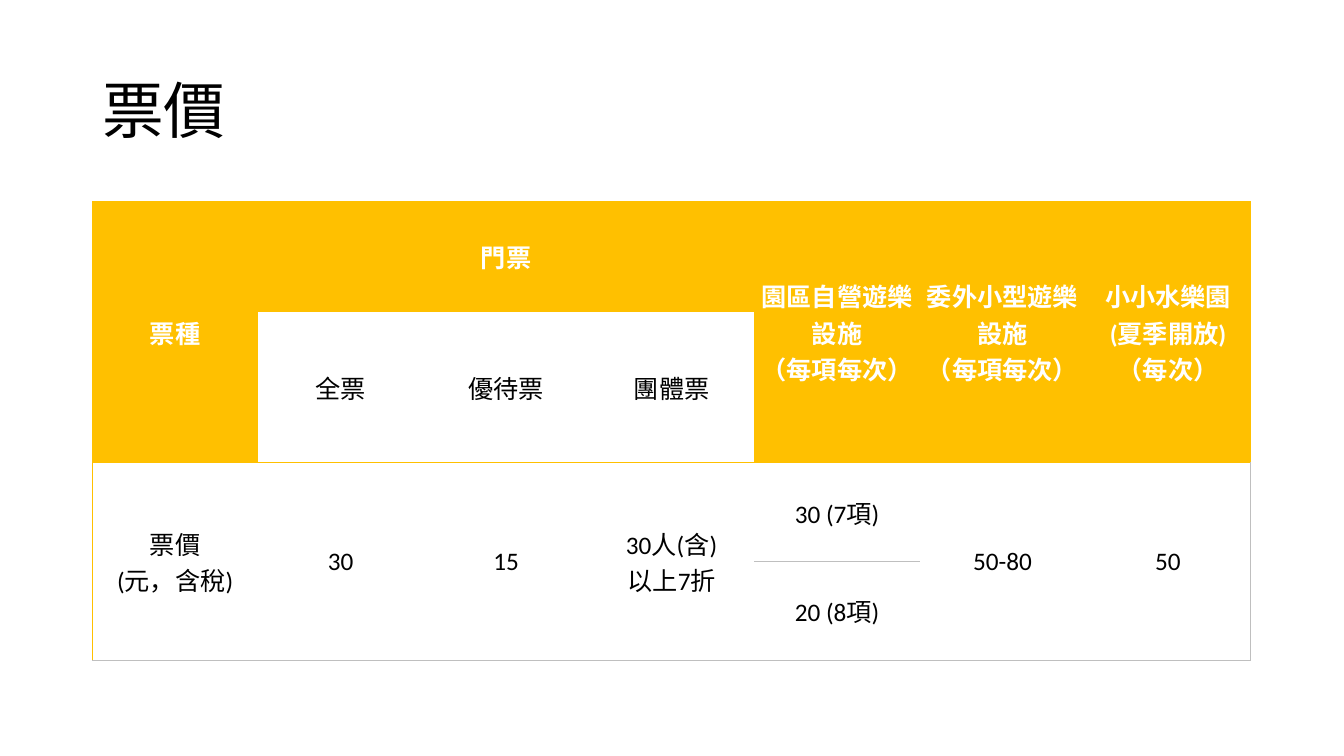
import pptx
import pptx.dml.color
import pptx.enum.text
import pptx.oxml.ns
import pptx.util
from lxml import etree
from pptx.util import Cm

COLORS = {"gold": "FFC000", "grey": "BFBFBF", "white": "FFFFFF", "black": "000000"}
FONT = "Calibri"
PLAIN_TABLE = "{2D5ABB26-0587-4C30-8999-92F81FD0307C}"
COLUMN_WIDTH = 4.17
ROW_HEIGHTS = [2.77, 3.81, 2.49, 2.49]
HEADER_ROWS = 2
SPLIT_COLUMN = 4

PRICES = [
    (0, 0, 2, 1, "票種"),
    (0, 1, 1, 3, "門票"),
    (0, 4, 2, 1, "園區自營遊樂設施\n（每項每次）"),
    (0, 5, 2, 1, "委外小型遊樂設施\n（每項每次）"),
    (0, 6, 2, 1, "小小水樂園\n(夏季開放)\n（每次）"),
    (1, 1, 1, 1, "全票"),
    (1, 2, 1, 1, "優待票"),
    (1, 3, 1, 1, "團體票"),
    (2, 0, 2, 1, "票價\n(元，含稅)"),
    (2, 1, 2, 1, "30"),
    (2, 2, 2, 1, "15"),
    (2, 3, 2, 1, "30人(含)\n以上7折"),
    (2, 4, 1, 1, "30 (7項)"),
    (3, 4, 1, 1, "20 (8項)"),
    (2, 5, 2, 1, "50-80"),
    (2, 6, 2, 1, "50"),
]


def rgb(name):
    """Return the named colour."""
    return pptx.dml.color.RGBColor.from_string(COLORS[name])


def write(frame, text, size=18, color="black", bold=False, align="CENTER", spacing=None):
    """Write one formatted paragraph into a text frame."""
    frame.word_wrap = True
    paragraph = frame.paragraphs[0]
    paragraph.text = text
    paragraph.alignment = getattr(pptx.enum.text.PP_ALIGN, align)
    paragraph.line_spacing = spacing
    for run in paragraph.runs:
        run.font.name = FONT
        run.font.size = pptx.util.Pt(size)
        run.font.bold = bold
        run.font.color.rgb = rgb(color)


def add_title(slide, text):
    """Add the slide heading."""
    heading = slide.shapes.add_textbox(Cm(2.33), Cm(1.01), Cm(29.21), Cm(3.68))
    heading.text_frame.vertical_anchor = pptx.enum.text.MSO_ANCHOR.MIDDLE
    write(heading.text_frame, text, size=44, align="LEFT", spacing=0.9)


def add_border(cell, side, color):
    """Draw a half-point line on one side of a cell."""
    properties = cell._tc.get_or_add_tcPr()
    line = etree.SubElement(properties, pptx.oxml.ns.qn(f"a:ln{side}"), w="6350")
    fill = etree.SubElement(line, pptx.oxml.ns.qn("a:solidFill"))
    etree.SubElement(fill, pptx.oxml.ns.qn("a:srgbClr"), val=COLORS[color])


def cell_borders(row, column, last_row, last_column):
    """Yield the visible sides and colours of a cell ending at last_row."""
    if column == 0:
        yield "L", "gold"
    if column == last_column:
        yield "R", "gold" if row < HEADER_ROWS else "grey"
    if row == 0:
        yield "T", "gold"
    if last_row == HEADER_ROWS - 1:
        yield "B", "gold"
    elif last_row == len(ROW_HEIGHTS) - 1 or (last_row >= HEADER_ROWS and column == SPLIT_COLUMN):
        yield "B", "grey"


def add_price_table(slide):
    """Add the ticket price table with its merged cells."""
    column_count = 7
    frame = slide.shapes.add_table(
        len(ROW_HEIGHTS), column_count, Cm(2.33), Cm(5.08),
        Cm(COLUMN_WIDTH * column_count), Cm(sum(ROW_HEIGHTS)))
    table = frame.table
    table._tbl.tblPr.find(pptx.oxml.ns.qn("a:tableStyleId")).text = PLAIN_TABLE
    table.horz_banding = False
    for column in table.columns:
        column.width = Cm(COLUMN_WIDTH)
    for row, height in zip(table.rows, ROW_HEIGHTS):
        row.height = Cm(height)
    for top, left, rows, columns, text in PRICES:
        origin = table.cell(top, left)
        if rows * columns > 1:
            origin.merge(table.cell(top + rows - 1, left + columns - 1))
        is_header = top == 0
        for row in range(top, top + rows):
            for column in range(left, left + columns):
                cell = table.cell(row, column)
                last_row = top + rows - 1
                for side, color in cell_borders(row, column, last_row, column_count - 1):
                    add_border(cell, side, color)
                cell.fill.solid()
                cell.fill.fore_color.rgb = rgb("gold" if is_header else "white")
        origin.margin_left = origin.margin_right = Cm(0.08)
        origin.margin_top = origin.margin_bottom = Cm(0.08)
        origin.vertical_anchor = pptx.enum.text.MSO_ANCHOR.MIDDLE
        write(origin.text_frame, text, color="white" if is_header else "black", bold=is_header)


def main():
    """Build the ticket price slide."""
    deck = pptx.Presentation()
    deck.slide_width, deck.slide_height = Cm(33.87), Cm(19.05)
    slide = deck.slides.add_slide(deck.slide_layouts[6])
    add_title(slide, "票價")
    add_price_table(slide)
    deck.save("out.pptx")


if __name__ == "__main__":
    main()
